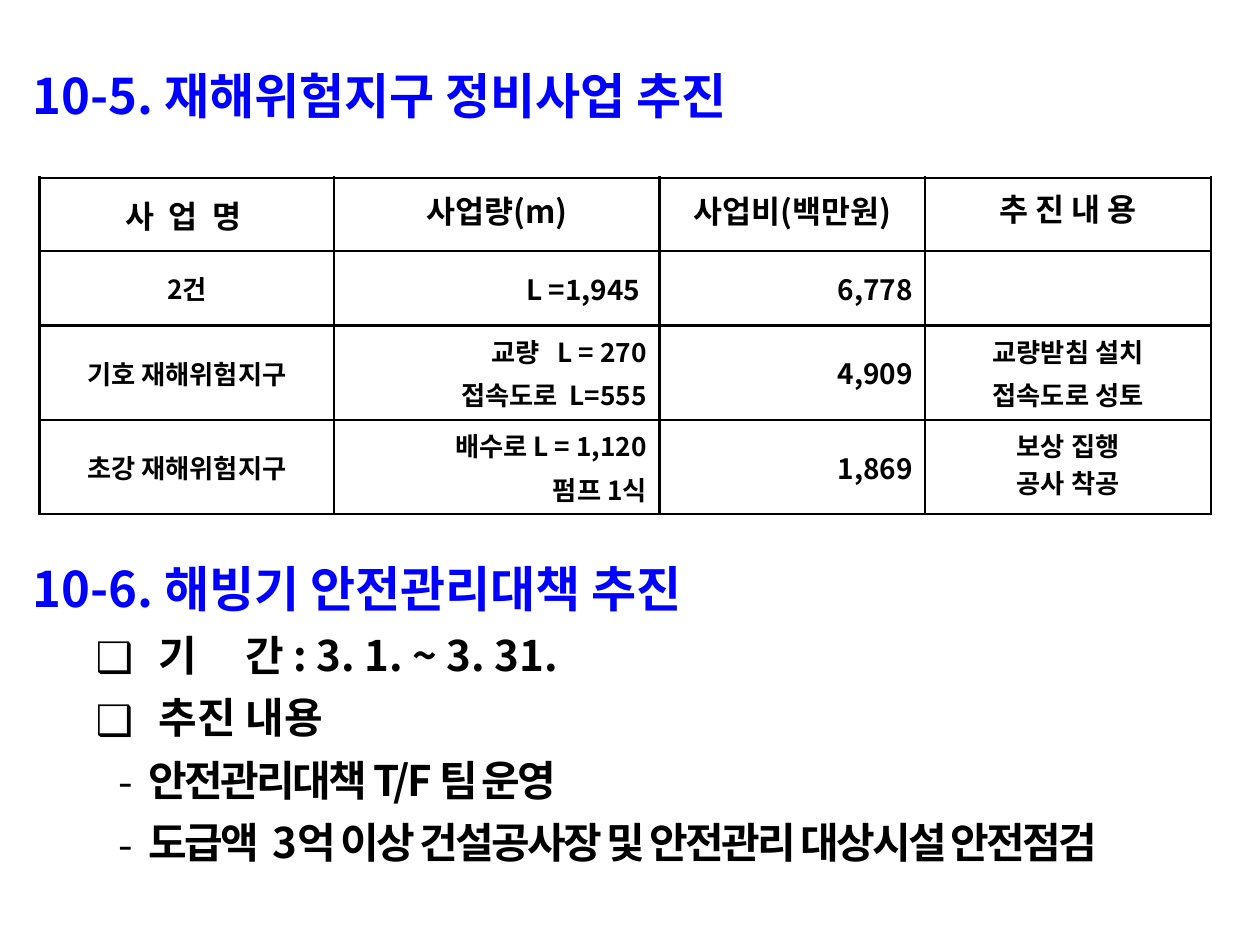
from pptx import Presentation
from pptx.dml.color import RGBColor
from pptx.enum.text import MSO_ANCHOR, MSO_AUTO_SIZE, PP_ALIGN
from pptx.oxml.ns import qn
from pptx.util import Pt
from lxml.etree import SubElement, Element

FONT = "Noto Sans CJK KR"
BLUE = RGBColor(0x00, 0x00, 0xFF)
BLACK = RGBColor(0x00, 0x00, 0x00)
CENTER, RIGHT = PP_ALIGN.CENTER, PP_ALIGN.RIGHT

# Content
PROJECT_HEADING = "10-5. 재해위험지구 정비사업 추진"
SAFETY_HEADING = "10-6. 해빙기 안전관리대책 추진"

# Table cells: lines, size, alignment, exact line spacing, extra top margin
PROJECTS = [
    [(["사  업  명 "], 18, CENTER, None, 0),
     (["사업량(m)"], 18, CENTER, 16, 4.6),
     (["사업비(백만원)"], 18, CENTER, 16, 4.6),
     (["추 진 내 용"], 18, CENTER, 18, 0)],
    [(["2건"], 15, CENTER, None, 0),
     (["L =1,945 "], 16, RIGHT, None, 0),
     (["6,778"], 16, RIGHT, None, 0),
     ([], 15, CENTER, None, 0)],
    [(["기호 재해위험지구"], 15, CENTER, None, 0),
     (["교량   L = 270", "접속도로  L=555"], 15, RIGHT, None, 0),
     (["4,909"], 16, RIGHT, None, 0),
     (["교량받침 설치", "접속도로 성토"], 15, CENTER, None, 0)],
    [(["초강 재해위험지구"], 15, CENTER, None, 0),
     (["배수로 L = 1,120", "펌프 1식"], 15, RIGHT, None, 0),
     (["1,869"], 16, RIGHT, None, 0),
     (["보상 집행", "공사 착공"], 15, CENTER, 18, 0)],
]
COLUMN_WIDTHS = [168.5, 185.8, 151.9, 163.4]
ROW_HEIGHTS = [42, 42.5, 54, 52]

# Bullet styles: character, left margin, first-line indent, letter spacing
BOX = ("❑", 72, -36, 0)
DASH = ("-", 66, -17, -1.5)
MEASURES = [
    ("기     간 : 3. 1. ~ 3. 31.", BOX),
    ("추진 내용", BOX),
    ("안전관리대책 T/F 팀 운영", DASH),
    ("도급액  3억 이상 건설공사장 및 안전관리 대상시설 안전점검", DASH),
]


def add_run(paragraph, text, size, color=BLACK, tracking=0):
    run = paragraph.add_run()
    run.text = text
    font = run.font
    font.size, font.bold, font.name = Pt(size), True, FONT
    font.color.rgb = color
    properties = run._r.get_or_add_rPr()
    SubElement(properties, qn("a:ea"), typeface=FONT)
    if tracking:
        properties.set("spc", str(int(tracking * 100)))


def add_bullet(paragraph, character, margin, indent):
    properties = paragraph._p.get_or_add_pPr()
    properties.set("marL", str(Pt(margin)))
    properties.set("indent", str(Pt(indent)))
    color = SubElement(properties, qn("a:buClr"))
    SubElement(color, qn("a:srgbClr"), val=str(BLACK))
    SubElement(properties, qn("a:buFont"), typeface=FONT)
    SubElement(properties, qn("a:buChar"), char=character)


def remove_bullet(paragraph):
    properties = paragraph._p.get_or_add_pPr()
    properties.set("marL", "0")
    properties.set("indent", "0")
    SubElement(properties, qn("a:buNone"))


def add_borders(cell):
    properties = cell._tc.get_or_add_tcPr()
    for position, side in enumerate(("lnL", "lnR", "lnT", "lnB")):
        line = Element(qn("a:" + side), w=str(Pt(1.5)))
        fill = SubElement(line, qn("a:solidFill"))
        SubElement(fill, qn("a:srgbClr"), val=str(BLACK))
        properties.insert(position, line)


def place(placeholder, left, top, width, height):
    placeholder.left, placeholder.top = Pt(left), Pt(top)
    placeholder.width, placeholder.height = Pt(width), Pt(height)
    frame = placeholder.text_frame
    frame.auto_size = MSO_AUTO_SIZE.NONE
    frame.word_wrap = True
    frame.vertical_anchor = MSO_ANCHOR.TOP
    heading = frame.paragraphs[0]
    heading.alignment = PP_ALIGN.LEFT
    heading.space_before = Pt(0)
    return frame, heading


def fill_cell(cell, lines, size, alignment, spacing, extra_top):
    cell.fill.background()
    add_borders(cell)
    cell.vertical_anchor = MSO_ANCHOR.MIDDLE
    cell.margin_top = Pt(3.6 + extra_top)
    frame = cell.text_frame
    for index, line in enumerate(lines):
        paragraph = frame.add_paragraph() if index else frame.paragraphs[0]
        paragraph.alignment = alignment
        paragraph.space_before = Pt(size * 0.2)
        if spacing:
            paragraph.line_spacing = Pt(spacing)
        add_run(paragraph, line, size)


def main():
    deck = Presentation()
    deck.slide_width, deck.slide_height = Pt(720), Pt(540)
    slide = deck.slides.add_slide(deck.slide_layouts[1])

    # Project heading
    _, heading = place(slide.shapes.title, 11.5, 33.8, 688.3, 242.6)
    add_run(heading, PROJECT_HEADING, 28, BLUE)

    # Project table
    table = slide.shapes.add_table(
        len(ROW_HEIGHTS), len(COLUMN_WIDTHS), Pt(22.5), Pt(101.5),
        Pt(sum(COLUMN_WIDTHS)), Pt(sum(ROW_HEIGHTS))).table
    table.first_row = table.horz_banding = False
    for column, width in zip(table.columns, COLUMN_WIDTHS):
        column.width = Pt(width)
    for row, height, project in zip(table.rows, ROW_HEIGHTS, PROJECTS):
        row.height = Pt(height)
        for cell, content in zip(row.cells, project):
            fill_cell(cell, *content)

    # Safety heading and measures
    frame, heading = place(slide.placeholders[1], 11.5, 315.4, 688.3, 213.8)
    remove_bullet(heading)
    add_run(heading, SAFETY_HEADING, 28, BLUE)
    for text, (character, margin, indent, tracking) in MEASURES:
        measure = frame.add_paragraph()
        measure.level = 1
        measure.space_before = Pt(0)
        measure.line_spacing = 1.24
        add_bullet(measure, character, margin, indent)
        add_run(measure, text, 24, tracking=tracking)

    deck.save("out.pptx")


if __name__ == "__main__":
    main()
